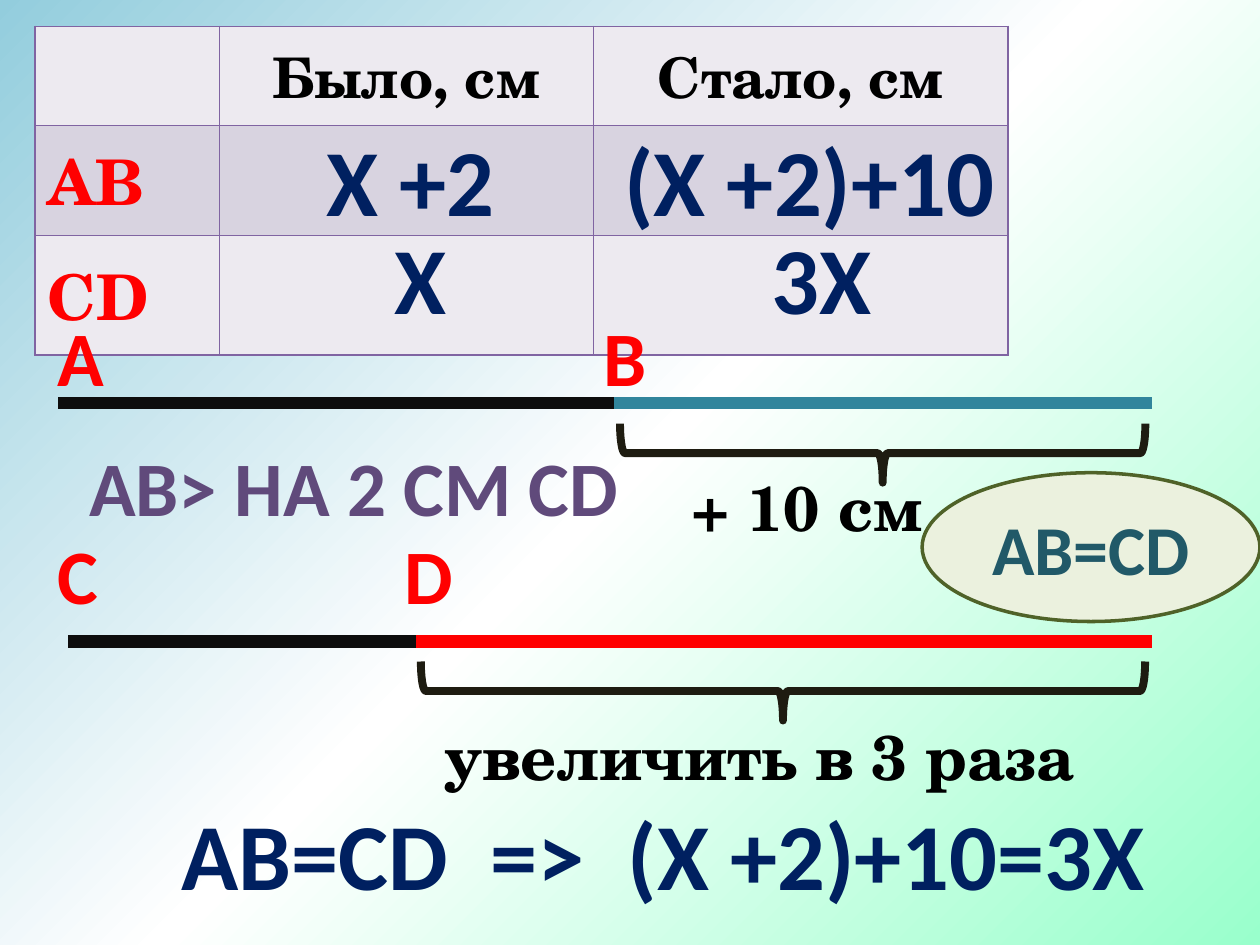
from copy import deepcopy

from lxml.etree import SubElement
from pptx import Presentation
from pptx.dml.color import RGBColor
from pptx.enum.shapes import MSO_CONNECTOR, MSO_SHAPE
from pptx.enum.text import MSO_ANCHOR, MSO_AUTO_SIZE, PP_ALIGN
from pptx.oxml.ns import qn
from pptx.util import Cm, Pt

SANS, SERIF = "Calibri", "TeX Gyre Schola"
BLACK, RED, NAVY = "000000", "FF0000", "002060"
VIOLET, INK, OLIVE = "5E457C", "0D0D0D", "1E1C11"

# Content; all lengths in cm
BACKGROUND = [(0, "93CDDD"), (0.5, "FFFFFF"), (1, "99FFCC")]
TABLE_LEFT, TABLE_TOP = 0.71, 0.53
COLUMNS, ROWS = (3.71, 7.54, 8.36), (2.0, 2.2, 2.41)
TABLE = [("", "Было, см", "Стало, см"), ("АВ", "", ""), ("CD", "", "")]
BAND_FILLS = ("EDEAF0", "D8D3E0")
BORDER = "8064A2"

# Text, left, top, width
FORMULAS = [
    ("X", 7.7, 4.32, 1.57),
    ("X +2", 6.3, 2.34, 3.94),
    ("3X", 15.29, 4.32, 2.54),
    ("(X +2)+10", 12.29, 2.34, 8.05),
    ("AB=CD  =>  (X +2)+10=3X", 3.3, 15.93, 20.14),
]
POINTS = [
    ("А", 0.89, 6.12, 1.47),
    ("В", 11.91, 6.12, 1.4),
    ("С", 0.89, 10.52, 1.35),
    ("D", 7.9, 10.52, 1.5),
]
COMPARISON = [("АВ> НА 2 СМ СD", 1.5, 8.74, 11.28)]
CHANGES = [("+ 10 cм", 13.69, 9.32, 6.2), ("увеличить в 3 раза", 8.71, 14.33, 15.39)]

# Start, end, height on the page, colour
SEGMENTS = [
    (1.3, 12.29, 8.13, INK),
    (12.5, 23.09, 8.13, "31859C"),
    (1.5, 8.31, 12.93, INK),
    (8.51, 23.09, 12.93, RED),
]
# Left, top, width, height before the quarter turn
BRACES = [(17.2, 3.84, 1.19, 10.59), (15.19, 6.63, 1.19, 14.6)]
ELLIPSE = (18.59, 9.53, 6.81, 3.0)


def rgb(code):
    return RGBColor.from_string(code)


def write(frame, text, size, face, colour, align=PP_ALIGN.CENTER, outline=None):
    para = frame.paragraphs[0]
    para.alignment = align
    span = para.add_run()
    span.text = text
    for name, value in {"size": Pt(size), "name": face, "bold": True}.items():
        setattr(span.font, name, value)
    span.font.color.rgb = rgb(colour)
    if outline:
        shade, width = outline
        line = SubElement(span.font._element, qn("a:ln"), w=str(Pt(width)))
        fill = SubElement(line, qn("a:solidFill"))
        SubElement(fill, qn("a:srgbClr"), val=shade)
        span.font._element.insert(0, line)


def add_text(page, item, height, size, face, colour, wrap=False, **look):
    text, left, top, width = item
    box = page.shapes.add_textbox(Cm(left), Cm(top), Cm(width), Cm(height))
    box.text_frame.word_wrap = wrap
    box.text_frame.auto_size = MSO_AUTO_SIZE.SHAPE_TO_FIT_TEXT
    write(box.text_frame, text, size, face, colour, **look)


def set_line(shape, colour, width):
    shape.line.color.rgb = rgb(colour)
    shape.line.width = Pt(width)


def add_border(cell):
    props = cell._tc.get_or_add_tcPr()
    for index, side in enumerate(("lnL", "lnR", "lnT", "lnB")):
        line = SubElement(props, qn(f"a:{side}"), w=str(Pt(1)))
        fill = SubElement(line, qn("a:solidFill"))
        SubElement(fill, qn("a:srgbClr"), val=BORDER)
        props.insert(index, line)


def paint_background(page):
    fill = page.background.fill
    fill.gradient()
    fill.gradient_angle = 315
    stops = page._element.find(".//" + qn("a:gsLst"))
    stops.append(deepcopy(stops[0]))
    for stop, (position, colour) in zip(fill.gradient_stops, BACKGROUND):
        stop.position = position
        stop.color.rgb = rgb(colour)


def add_lengths_table(page):
    table = page.shapes.add_table(
        len(ROWS), len(COLUMNS), Cm(TABLE_LEFT), Cm(TABLE_TOP),
        Cm(sum(COLUMNS)), Cm(sum(ROWS))).table
    for column, width in zip(table.columns, COLUMNS):
        column.width = Cm(width)
    for r, (row, height) in enumerate(zip(table.rows, ROWS)):
        row.height = Cm(height)
        for cell, text in zip(row.cells, TABLE[r]):
            cell.fill.solid()
            cell.fill.fore_color.rgb = rgb(BAND_FILLS[r % 2])
            cell.vertical_anchor = MSO_ANCHOR.MIDDLE
            add_border(cell)
            if text and r == 0:
                write(cell.text_frame, text, 32, SERIF, BLACK)
            elif text:
                write(cell.text_frame, text, 36, SERIF, RED, PP_ALIGN.LEFT)


def add_segment(page, start, end, level, colour):
    line = page.shapes.add_connector(
        MSO_CONNECTOR.STRAIGHT, Cm(start), Cm(level), Cm(end), Cm(level))
    set_line(line, colour, 7)
    props = line._element.spPr
    props.find(qn("a:ln")).set("cap", "sq")
    SubElement(props, qn("a:effectLst"))


def add_shape(page, kind, place, colour, width):
    shape = page.shapes.add_shape(kind, *map(Cm, place))
    shape.shadow.inherit = False
    shape.fill.background()
    set_line(shape, colour, width)
    return shape


def main():
    deck = Presentation()
    deck.slide_width, deck.slide_height = Cm(25.4), Cm(19.05)
    page = deck.slides.add_slide(deck.slide_layouts[6])
    paint_background(page)
    add_lengths_table(page)

    # Segments with their braces
    for segment in SEGMENTS:
        add_segment(page, *segment)
    for place in BRACES:
        add_shape(page, MSO_SHAPE.LEFT_BRACE, place, OLIVE, 4.5).rotation = 270

    # Labels
    for items, height, size, colour in (
            (FORMULAS, 2.57, 54, NAVY),
            (POINTS, 2.13, 44, RED),
            (COMPARISON, 2.13, 44, "604A7B")):
        for item in items:
            add_text(page, item, height, size, SANS, colour, outline=(VIOLET, 0.71))
    for item in CHANGES:
        add_text(page, item, 1.8, 36, SERIF, BLACK, wrap=True, align=PP_ALIGN.LEFT)

    # Condition in the ellipse
    ellipse = add_shape(page, MSO_SHAPE.OVAL, ELLIPSE, "4F6228", 2)
    ellipse.fill.solid()
    ellipse.fill.fore_color.rgb = rgb("EBF1DE")
    ellipse.text_frame.vertical_anchor = MSO_ANCHOR.MIDDLE
    write(ellipse.text_frame, "АВ=CD", 40, SANS, "215968", outline=("054697", 1))

    deck.save("out.pptx")


if __name__ == "__main__":
    main()
